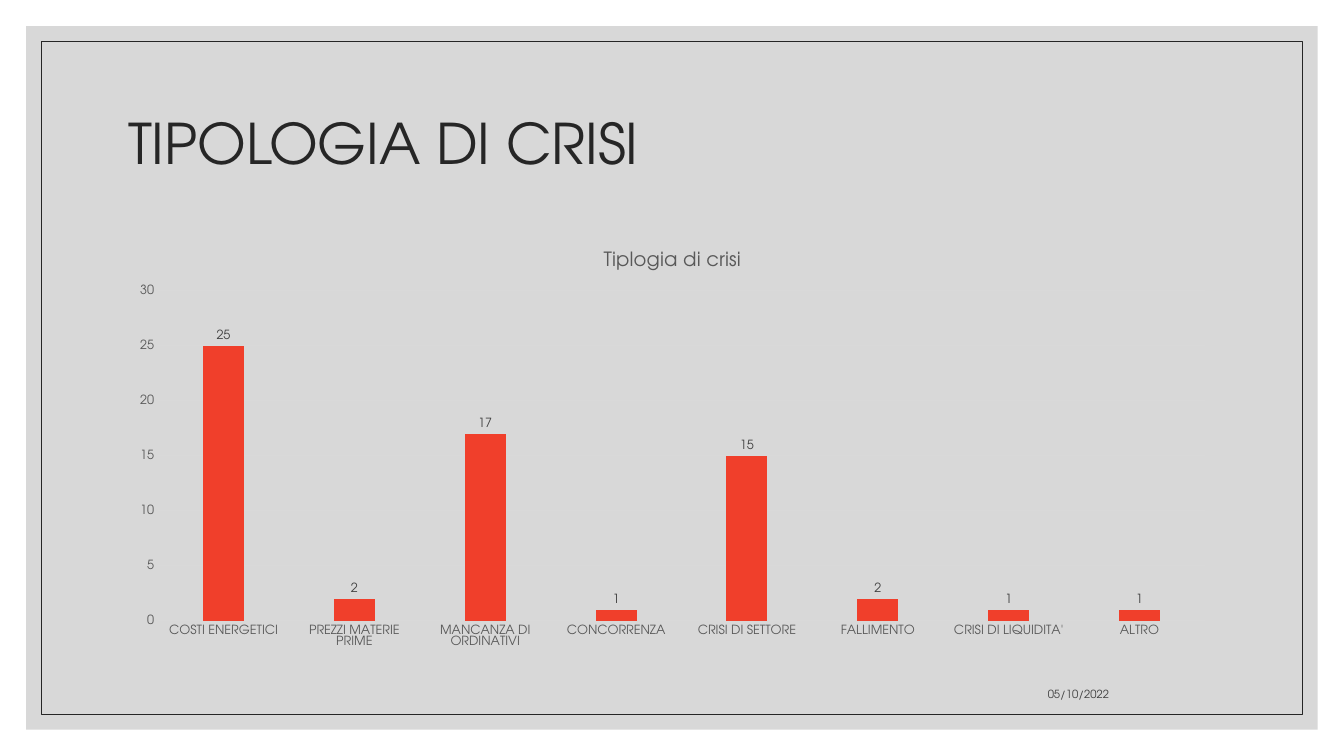
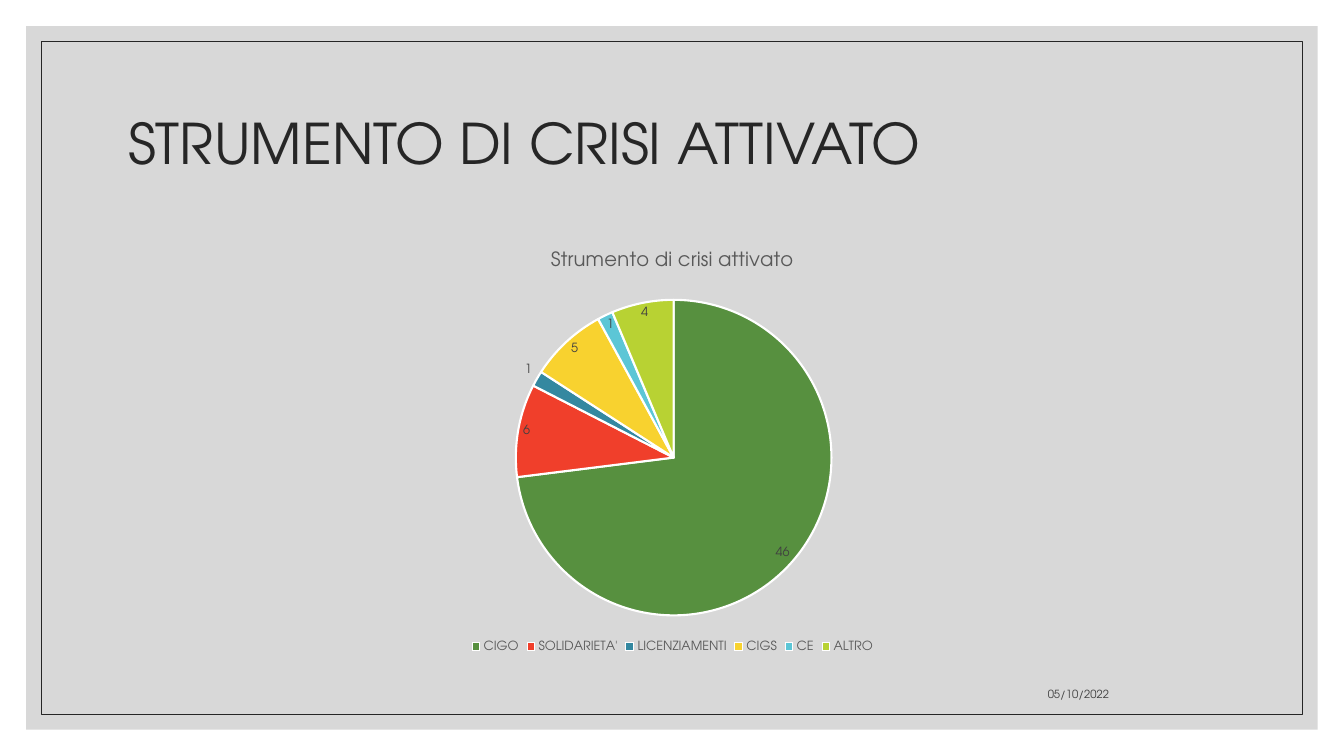
from dataclasses import dataclass

from lxml.etree import SubElement
from pptx import Presentation
from pptx.chart.data import CategoryChartData
from pptx.dml.color import RGBColor
from pptx.enum.chart import XL_CHART_TYPE, XL_LABEL_POSITION, XL_LEGEND_POSITION, XL_TICK_MARK
from pptx.enum.shapes import MSO_SHAPE
from pptx.enum.text import MSO_ANCHOR, MSO_AUTO_SIZE, PP_ALIGN
from pptx.oxml.ns import qn
from pptx.util import Inches, Pt

TITLE_ONLY_LAYOUT = 5
SLIDE_WIDTH, SLIDE_HEIGHT = 13.33, 7.5
CONTENT_LEFT, CONTENT_WIDTH = 1.17, 11
DATE = "05/10/2022"


@dataclass(frozen=True)
class Theme:
    font: str = "TeX Gyre Adventor"
    ink: str = "262626"
    label: str = "404040"
    muted: str = "595959"
    rule: str = "D9D9D9"
    panel: str = "BFBFBF"
    white: str = "FFFFFF"
    green: str = "57903F"
    red: str = "F03F2B"
    teal: str = "3488A0"
    yellow: str = "F8D22F"
    sky: str = "5CC6D6"
    lime: str = "B8D233"
    title_size: float = 40
    chart_title_size: float = 14
    chart_size: float = 9
    date_size: float = 8


def paint(fill, color):
    fill.solid()
    fill.fore_color.rgb = RGBColor.from_string(color)


def stroke(line, color, width):
    paint(line.fill, color)
    line.width = Pt(width)


class SlideBuilder:
    def __init__(self, deck, theme):
        self.deck = deck
        self.theme = theme
        self.slide = None

    def style_font(self, font, size, color):
        font.name = self.theme.font
        font.size = Pt(size)
        font.bold = False
        font.color.rgb = RGBColor.from_string(color)

    def start(self, title):
        self.slide = self.deck.slides.add_slide(self.deck.slide_layouts[TITLE_ONLY_LAYOUT])
        panel = self.inset_rectangle(0.26)
        paint(panel.fill, self.theme.panel)
        color = panel.element.find(".//" + qn("a:srgbClr"))
        SubElement(color, qn("a:alpha")).set("val", "60000")
        panel.line.fill.background()
        border = self.inset_rectangle(0.41)
        border.fill.background()
        stroke(border.line, self.theme.ink, 0.5)
        self.title(title)
        self.date()

    def inset_rectangle(self, margin):
        """Add a rectangle behind the title, equally far from every slide edge."""
        shape = self.slide.shapes.add_shape(
            MSO_SHAPE.RECTANGLE, Inches(margin), Inches(margin),
            Inches(SLIDE_WIDTH - 2 * margin), Inches(SLIDE_HEIGHT - 2 * margin))
        shape.shadow.inherit = False
        self.slide.shapes.title.element.addprevious(shape.element)
        return shape

    def title(self, text):
        box = self.slide.shapes.title
        box.left, box.top = Inches(CONTENT_LEFT), Inches(0.7)
        box.width, box.height = Inches(CONTENT_WIDTH), Inches(1.5)
        self.set_text(box, text, self.theme.title_size, self.theme.ink,
                      PP_ALIGN.LEFT, MSO_ANCHOR.MIDDLE)
        box.text_frame.paragraphs[0].line_spacing = 0.9

    def date(self):
        box = self.slide.shapes.add_textbox(Inches(7.94), Inches(6.6), Inches(3.16), Inches(0.4))
        self.set_text(box, DATE, self.theme.date_size, self.theme.label,
                      PP_ALIGN.RIGHT, MSO_ANCHOR.BOTTOM)

    def set_text(self, box, text, size, color, alignment, anchor):
        frame = box.text_frame
        frame.text = text
        frame.word_wrap = True
        frame.auto_size = MSO_AUTO_SIZE.NONE
        frame.vertical_anchor = anchor
        para = frame.paragraphs[0]
        para.alignment = alignment
        self.style_font(para.runs[0].font, size, color)

    def chart(self, kind, title, values, label_position):
        """Add a titled one-series chart with value labels; values maps category to number."""
        data = CategoryChartData()
        data.categories = list(values)
        data.add_series("Series 1", list(values.values()))
        chart = self.slide.shapes.add_chart(
            kind, Inches(CONTENT_LEFT), Inches(2.3),
            Inches(CONTENT_WIDTH), Inches(4.21), data).chart
        self.style_font(chart.font, self.theme.chart_size, self.theme.muted)
        chart.has_legend = False
        chart.has_title = True
        chart.chart_title.include_in_layout = False
        heading = chart.chart_title.text_frame
        heading.text = title
        self.style_font(heading.paragraphs[0].runs[0].font,
                        self.theme.chart_title_size, self.theme.muted)
        plot = chart.plots[0]
        plot.has_data_labels = True
        labels = plot.data_labels
        labels.show_value = True
        labels.show_percentage = False
        labels.position = label_position
        self.style_font(labels.font, self.theme.chart_size, self.theme.label)
        return chart

    def column_chart(self, title, values, color, maximum, step):
        chart = self.chart(XL_CHART_TYPE.COLUMN_CLUSTERED, title, values,
                           XL_LABEL_POSITION.OUTSIDE_END)
        plot = chart.plots[0]
        plot.vary_by_categories = False
        plot.gap_width = 219
        plot.overlap = -27
        paint(plot.series[0].format.fill, color)
        for axis in (chart.category_axis, chart.value_axis):
            axis.major_tick_mark = axis.minor_tick_mark = XL_TICK_MARK.NONE
            self.style_font(axis.tick_labels.font, self.theme.chart_size, self.theme.muted)
        stroke(chart.category_axis.format.line, self.theme.rule, 0.75)
        value_axis = chart.value_axis
        value_axis.minimum_scale, value_axis.maximum_scale = 0, maximum
        value_axis.major_unit = step
        value_axis.format.line.fill.background()
        stroke(value_axis.major_gridlines.format.line, self.theme.rule, 0.75)

    def pie_chart(self, title, values, colors):
        chart = self.chart(XL_CHART_TYPE.PIE, title, values, XL_LABEL_POSITION.BEST_FIT)
        plot = chart.plots[0]
        plot.vary_by_categories = True
        for index, color in enumerate(colors):
            wedge = plot.series[0].points[index].format
            paint(wedge.fill, color)
            stroke(wedge.line, self.theme.white, 1.5)
        chart.has_legend = True
        chart.legend.position = XL_LEGEND_POSITION.BOTTOM
        chart.legend.include_in_layout = False
        self.style_font(chart.legend.font, self.theme.chart_size, self.theme.muted)


def main():
    deck = Presentation()
    deck.slide_width, deck.slide_height = Inches(SLIDE_WIDTH), Inches(SLIDE_HEIGHT)
    theme = Theme()
    builder = SlideBuilder(deck, theme)

    builder.start("TIPOLOGIA DI CRISI")
    crisis_types = {
        "COSTI ENERGETICI": 25,
        "PREZZI MATERIE PRIME": 2,
        "MANCANZA DI ORDINATIVI": 17,
        "CONCORRENZA": 1,
        "CRISI DI SETTORE": 15,
        "FALLIMENTO": 2,
        "CRISI DI LIQUIDITA'": 1,
        "ALTRO": 1,
    }
    builder.column_chart("Tiplogia di crisi", crisis_types, theme.red, maximum=30, step=5)

    builder.start("STRUMENTO DI CRISI ATTIVATO")
    instruments = {"CIGO": 46, "SOLIDARIETA'": 6, "LICENZIAMENTI": 1,
                   "CIGS": 5, "CE": 1, "ALTRO": 4}
    builder.pie_chart("Strumento di crisi attivato", instruments,
                      (theme.green, theme.red, theme.teal, theme.yellow, theme.sky, theme.lime))

    deck.save("out.pptx")


if __name__ == "__main__":
    main()
